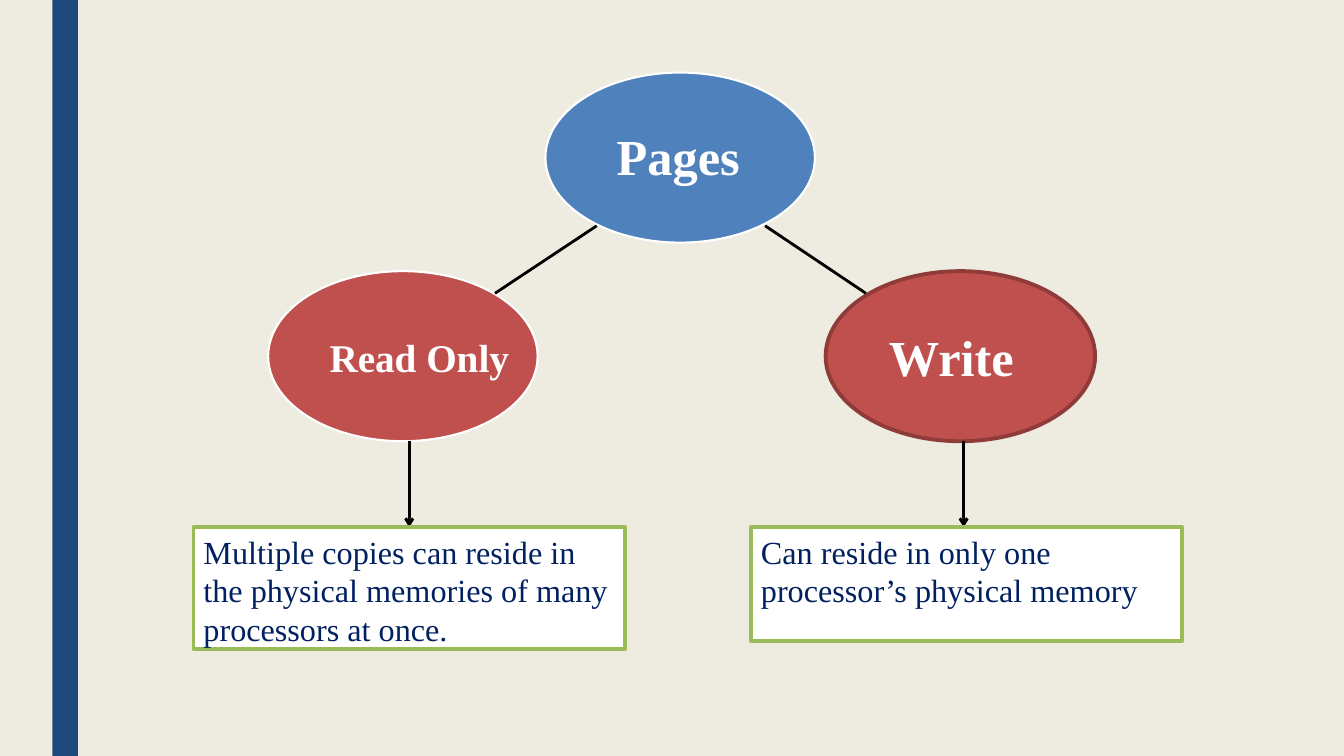
from lxml.etree import SubElement
from pptx import Presentation
from pptx.dml.color import RGBColor as Rgb
from pptx.enum.shapes import MSO_CONNECTOR as Link, MSO_SHAPE as Form
from pptx.enum.text import MSO_ANCHOR as Anchor, PP_ALIGN as Align
from pptx.oxml.ns import qn
from pptx.util import Inches, Pt

HUES = {
    "sand": "EEECE1", "navy": "1F497D", "blue": "4F81BD", "red": "C0504D",
    "brick": "8E3B39", "green": "9BBB59", "white": "FFFFFF",
    "black": "000000", "ink": "002060",
}


class Board:
    """Draws on one slide; lengths are percent of its width and height."""

    font = "Times New Roman"

    def __init__(self):
        self.deck = Presentation()
        self.deck.slide_width = Inches(13.33)
        self.deck.slide_height = Inches(7.5)
        self.slide = self.deck.slides.add_slide(self.deck.slide_layouts[6])
        self.paint(self.slide.background.fill, "sand")

    def paint(self, fill, hue):
        fill.solid()
        fill.fore_color.rgb = Rgb.from_string(HUES[hue])

    def scale(self, *spots):
        """Turn alternating x and y shares into lengths."""
        sides = self.deck.slide_width, self.deck.slide_height
        return [round(s * sides[i % 2] / 100) for i, s in enumerate(spots)]

    def shape(self, form, spot, fill, edge=None, width=1.5):
        item = self.slide.shapes.add_shape(form, *self.scale(*spot))
        item.shadow.inherit = False
        self.paint(item.fill, fill)
        if edge:
            self.paint(item.line.fill, edge)
            item.line.width = Pt(width)
        else:
            item.line.fill.background()
        return item

    def letter(self, item, text, size, hue, bold=False):
        frame = item.text_frame
        frame.word_wrap = True
        frame.vertical_anchor = Anchor.TOP
        frame.text = text
        para = frame.paragraphs[0]
        para.alignment = Align.LEFT
        font = para.runs[0].font
        font.name, font.size, font.bold = self.font, Pt(size), bold
        font.color.rgb = Rgb.from_string(HUES[hue])

    def label(self, spot, text, size):
        item = self.slide.shapes.add_textbox(*self.scale(*spot))
        self.letter(item, text, size, "white", True)

    def note(self, spot, text):
        item = self.shape(Form.RECTANGLE, spot, "white", "green", 2.75)
        self.letter(item, text, 23, "ink")

    def line(self, ends, arrow=False):
        item = self.slide.shapes.add_connector(Link.STRAIGHT, *self.scale(*ends))
        self.paint(item.line.fill, "black")
        item.line.width = Pt(0)
        props = item.element.spPr
        if arrow:
            SubElement(props.find(qn("a:ln")), qn("a:tailEnd"), type="arrow")
        SubElement(props, qn("a:effectLst"))


OVAL = 20.05, 22.5
NOTE_TOP = 69.73
# oval left, edge hue, edge width, label spot, label, size,
# link ends, arrow x, note height, note
KINDS = [
    (19.95, "white", 1.5, (23.78, 43.47, 17.4, 7.33), "Read Only", 28,
     (36.83, 38.8, 44.4, 29.87), 30.45, 16.13,
     "Multiple copies can reside in the physical memories of many "
     "processors at once."),
    (61.43, "brick", 2.75, (65.4, 42.53, 16.05, 9.07), "Write", 36,
     (56.93, 29.87, 64.43, 38.8), 71.7, 15.07,
     "Can reside in only one processor’s physical memory"),
]


def main():
    board = Board()
    board.shape(Form.RECTANGLE, (3.9, 0, 1.9, 100), "navy")
    board.shape(Form.OVAL, (40.58, 9.6, *OVAL), "blue", "white")
    board.label((45.15, 15.87, 12.9, 9.07), "Pages", 36)
    for left, edge, width, spot, name, size, link, mid, high, text in KINDS:
        board.shape(Form.OVAL, (left, 35.87, *OVAL), "red", edge, width)
        board.line(link)
        board.label(spot, name, size)
        board.line((mid, 58.4, mid, NOTE_TOP), arrow=True)
        board.note((left - 5.55, NOTE_TOP, 32.1, high), text)
    board.deck.save("out.pptx")


if __name__ == "__main__":
    main()
